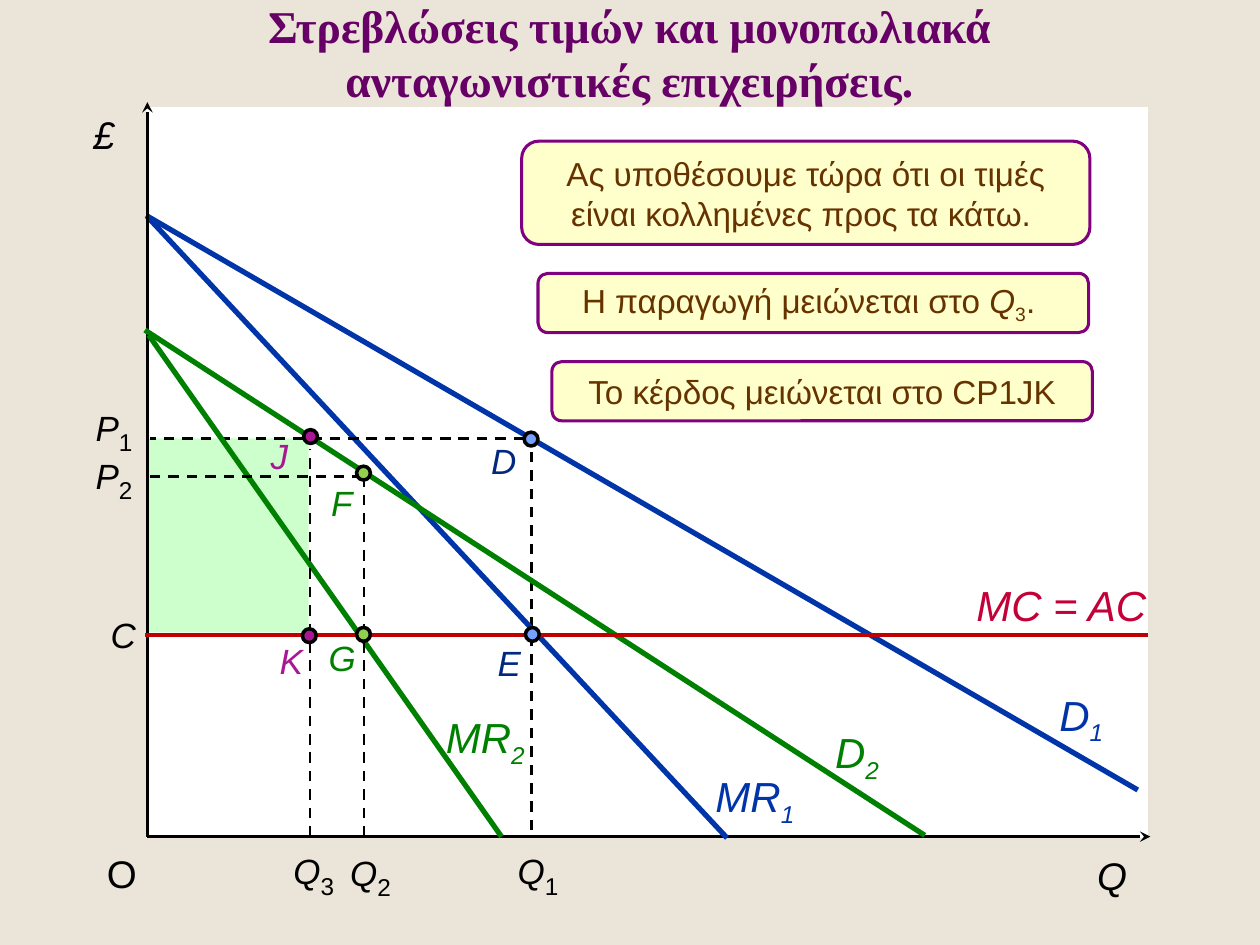
import pptx
import pptx.util
import pptx.dml.color
import pptx.enum.dml
import pptx.enum.shapes
import pptx.enum.text
import pptx.oxml.ns
import lxml.etree

Inches = pptx.util.Inches
Pt = pptx.util.Pt
ShapeType = pptx.enum.shapes.MSO_SHAPE
colors = {
    "background": "EAE5D8", "white": "FFFFFF", "profit": "CCFFCC", "black": "000000",
    "blue": "0035AA", "navy": "002880", "green": "008000", "purple": "A81893",
    "crimson": "C40038", "red": "C00000", "sky": "77A1FF", "lime": "92D050",
    "cream": "FFFFCC", "border": "800080", "brown": "663300", "title": "660066",
}
rgb = {name: pptx.dml.color.RGBColor.from_string(value) for name, value in colors.items()}


def add_shape(kind, left, top, width, height, fill, line=None, weight=0):
    shape = slide.shapes.add_shape(kind, Inches(left), Inches(top), Inches(width), Inches(height))
    shape.shadow.inherit = False
    shape.fill.solid()
    shape.fill.fore_color.rgb = rgb[fill]
    if line:
        shape.line.color.rgb = rgb[line]
        shape.line.width = Pt(weight)
    else:
        shape.line.fill.background()
    return shape


def add_run(paragraph, text, size, color, italic=False, subscript=False, font="Arial"):
    run = paragraph.add_run()
    run.text = text
    run.font.name = font
    run.font.size = Pt(size)
    run.font.italic = italic
    run.font.color.rgb = rgb[color]
    if subscript:
        run._r.get_or_add_rPr().set("baseline", "-25000")
    return run


presentation = pptx.Presentation()
presentation.slide_width = Inches(10)
presentation.slide_height = Inches(7.5)
slide = presentation.slides.add_slide(presentation.slide_layouts[6])
slide.background.fill.solid()
slide.background.fill.fore_color.rgb = rgb["background"]

add_shape(ShapeType.RECTANGLE, 1.16, 0.85, 7.95, 5.8, "white")
add_shape(ShapeType.RECTANGLE, 1.16, 3.48, 1.29, 1.54, "profit")

lines = [
    (4.22, 6.59, 4.22, 3.49, "black", 1.5, "dash"),
    (1.16, 1.71, 9.03, 6.27, "blue", 3, "solid"),
    (1.17, 6.64, 9.13, 6.64, "black", 2, "arrow"),
    (1.17, 1.72, 5.77, 6.65, "blue", 3, "solid"),
    (1.17, 6.64, 1.17, 0.81, "black", 2, "arrow"),
    (4.16, 3.48, 1.19, 3.48, "black", 1.5, "dash"),
    (1.15, 2.62, 7.34, 6.63, "green", 3, "solid"),
    (1.18, 2.66, 3.98, 6.64, "green", 3, "solid"),
    (2.89, 6.64, 2.89, 3.78, "black", 1.5, "dash"),
    (2.88, 3.78, 1.19, 3.78, "black", 1.5, "dash"),
    (9.11, 5.04, 1.15, 5.04, "red", 2.5, "solid"),
    (2.46, 6.64, 2.46, 3.56, "black", 1.5, "dash"),
]
for x1, y1, x2, y2, color, weight, style in lines:
    connector = slide.shapes.add_connector(
        pptx.enum.shapes.MSO_CONNECTOR.STRAIGHT, Inches(x1), Inches(y1), Inches(x2), Inches(y2))
    connector.line.color.rgb = rgb[color]
    connector.line.width = Pt(weight)
    if style == "dash":
        connector.line.dash_style = pptx.enum.dml.MSO_LINE.DASH
    if style == "arrow":
        lxml.etree.SubElement(
            connector.line._get_or_add_ln(), pptx.oxml.ns.qn("a:tailEnd"), type="stealth")
    lxml.etree.SubElement(connector._element.spPr, pptx.oxml.ns.qn("a:effectLst"))

points = [
    (4.16, 3.43, "sky"), (4.17, 4.98, "sky"),
    (2.83, 3.7, "lime"), (2.83, 4.98, "lime"),
    (2.41, 3.41, "purple"), (2.4, 4.99, "purple"),
]
for left, top, color in points:
    add_shape(ShapeType.OVAL, left, top, 0.11, 0.11, color, "black", 2)

label_heights = {20: 0.43, 22: 0.47, 24: 0.5}
labels = [
    ("£", "", 0.64, 0.83, 0.46, 22, "black"),
    ("Q", "", 8.61, 6.71, 0.52, 22, "black"),
    ("O", "", 0.75, 6.7, 0.44, 22, "black"),
    ("MR", "1", 5.58, 6.07, 0.84, 24, "blue"),
    ("D", "1", 8.31, 5.42, 0.57, 24, "blue"),
    ("MR", "2", 3.44, 5.6, 0.84, 24, "green"),
    ("D", "2", 6.53, 5.72, 0.57, 24, "green"),
    ("MC = AC", "", 7.65, 4.55, 1.56, 24, "crimson"),
    ("P", "1", 0.66, 3.12, 0.51, 20, "black"),
    ("P", "2", 0.66, 3.5, 0.51, 20, "black"),
    ("Q", "1", 4.01, 6.64, 0.54, 20, "black"),
    ("Q", "2", 2.68, 6.65, 0.54, 20, "black"),
    ("Q", "3", 2.23, 6.64, 0.54, 20, "black"),
    ("C", "", 0.78, 4.82, 0.4, 20, "black"),
    ("D", "", 3.8, 3.44, 0.4, 20, "navy"),
    ("E", "", 3.85, 5.04, 0.39, 20, "navy"),
    ("F", "", 2.53, 3.77, 0.37, 20, "green"),
    ("G", "", 2.51, 5, 0.42, 20, "green"),
    ("J", "", 2.05, 3.4, 0.34, 20, "purple"),
    ("K", "", 2.12, 5.03, 0.39, 20, "purple"),
]
for text, subscript, left, top, width, size, color in labels:
    label = slide.shapes.add_textbox(
        Inches(left), Inches(top), Inches(width), Inches(label_heights[size]))
    label.text_frame.word_wrap = False
    label.text_frame.auto_size = pptx.enum.text.MSO_AUTO_SIZE.SHAPE_TO_FIT_TEXT
    paragraph = label.text_frame.paragraphs[0]
    add_run(paragraph, text, size, color, italic=text != "O")
    if subscript:
        add_run(paragraph, subscript, 24, color, italic=size == 24, subscript=True)

callouts = [
    (4.14, 1.12, 4.51, 0.82,
     [("Ας υποθέσουμε τώρα ότι οι τιμές είναι κολλημένες προς τα κάτω. ", False, False)]),
    (4.27, 2.17, 4.37, 0.47,
     [("Η παραγωγή μειώνεται στο ", False, False), ("Q", True, False),
      ("3", False, True), (". ", False, False)]),
    (4.38, 2.87, 4.29, 0.47, [("Το κέρδος μειώνεται στο CP1JK", False, False)]),
]
for left, top, width, height, runs in callouts:
    callout = add_shape(
        ShapeType.ROUNDED_RECTANGLE, left, top, width, height, "cream", "border", 1.75)
    callout.text_frame.word_wrap = True
    callout.text_frame.auto_size = pptx.enum.text.MSO_AUTO_SIZE.SHAPE_TO_FIT_TEXT
    callout.text_frame.vertical_anchor = pptx.enum.text.MSO_ANCHOR.MIDDLE
    paragraph = callout.text_frame.paragraphs[0]
    paragraph.alignment = pptx.enum.text.PP_ALIGN.CENTER
    for text, italic, subscript in runs:
        add_run(paragraph, text, 19, "brown", italic, subscript)

title = slide.shapes.add_textbox(Inches(0), Inches(0), Inches(10), Inches(0.83))
title.text_frame.word_wrap = True
title.text_frame.vertical_anchor = pptx.enum.text.MSO_ANCHOR.MIDDLE
paragraph = title.text_frame.paragraphs[0]
paragraph.alignment = pptx.enum.text.PP_ALIGN.CENTER
for index, text in enumerate(["Στρεβλώσεις τιμών και μονοπωλιακά", "ανταγωνιστικές επιχειρήσεις."]):
    if index:
        paragraph.add_line_break()
    run = add_run(paragraph, text, 26, "title", font="Times New Roman")
    run.font.bold = True
    effects = lxml.etree.Element(pptx.oxml.ns.qn("a:effectLst"))
    shadow = lxml.etree.SubElement(
        effects, pptx.oxml.ns.qn("a:outerShdw"), dist="38100", dir="2700000")
    lxml.etree.SubElement(shadow, pptx.oxml.ns.qn("a:srgbClr"), val=colors["black"])
    run._r.rPr.find(pptx.oxml.ns.qn("a:solidFill")).addnext(effects)

presentation.save("out.pptx")
